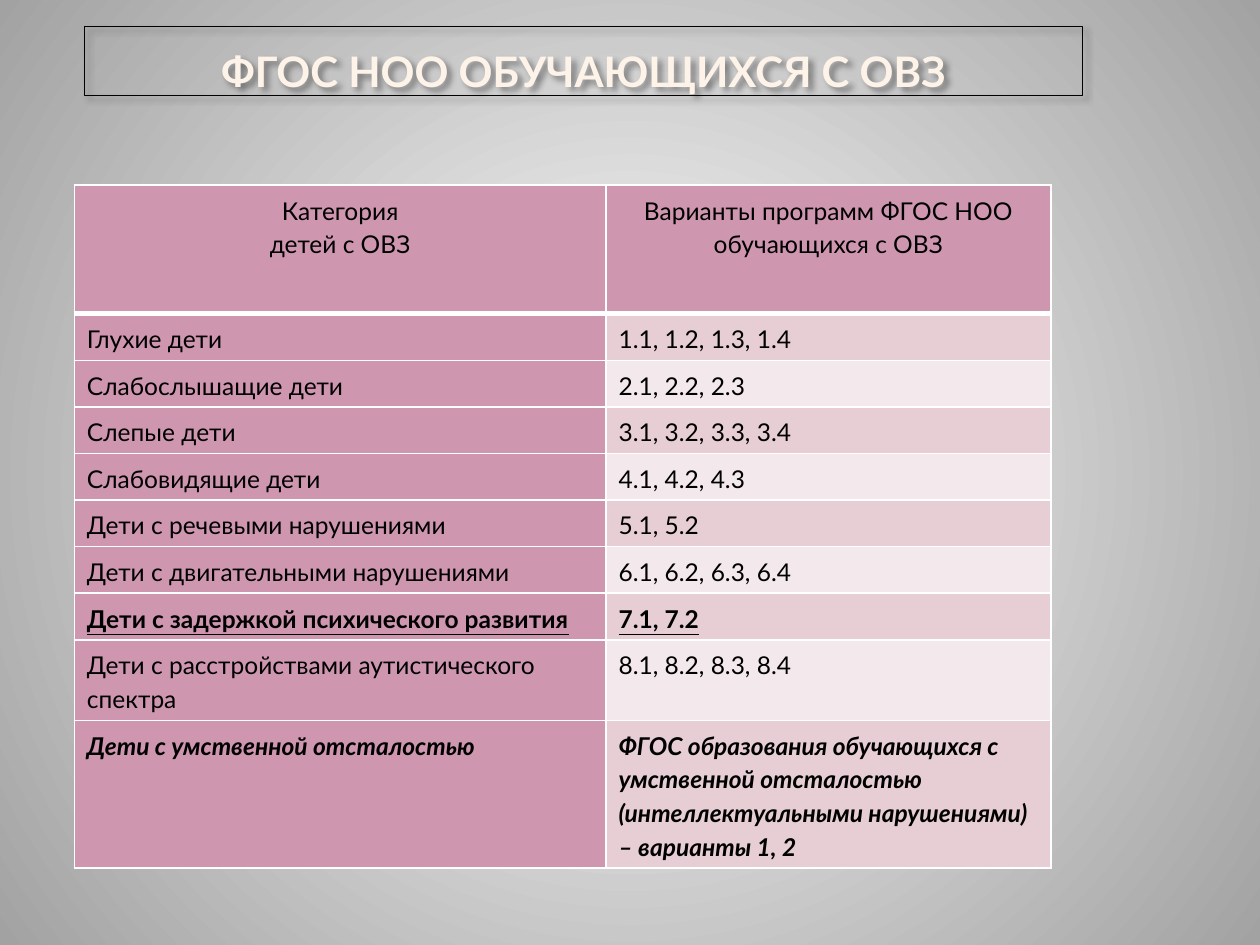
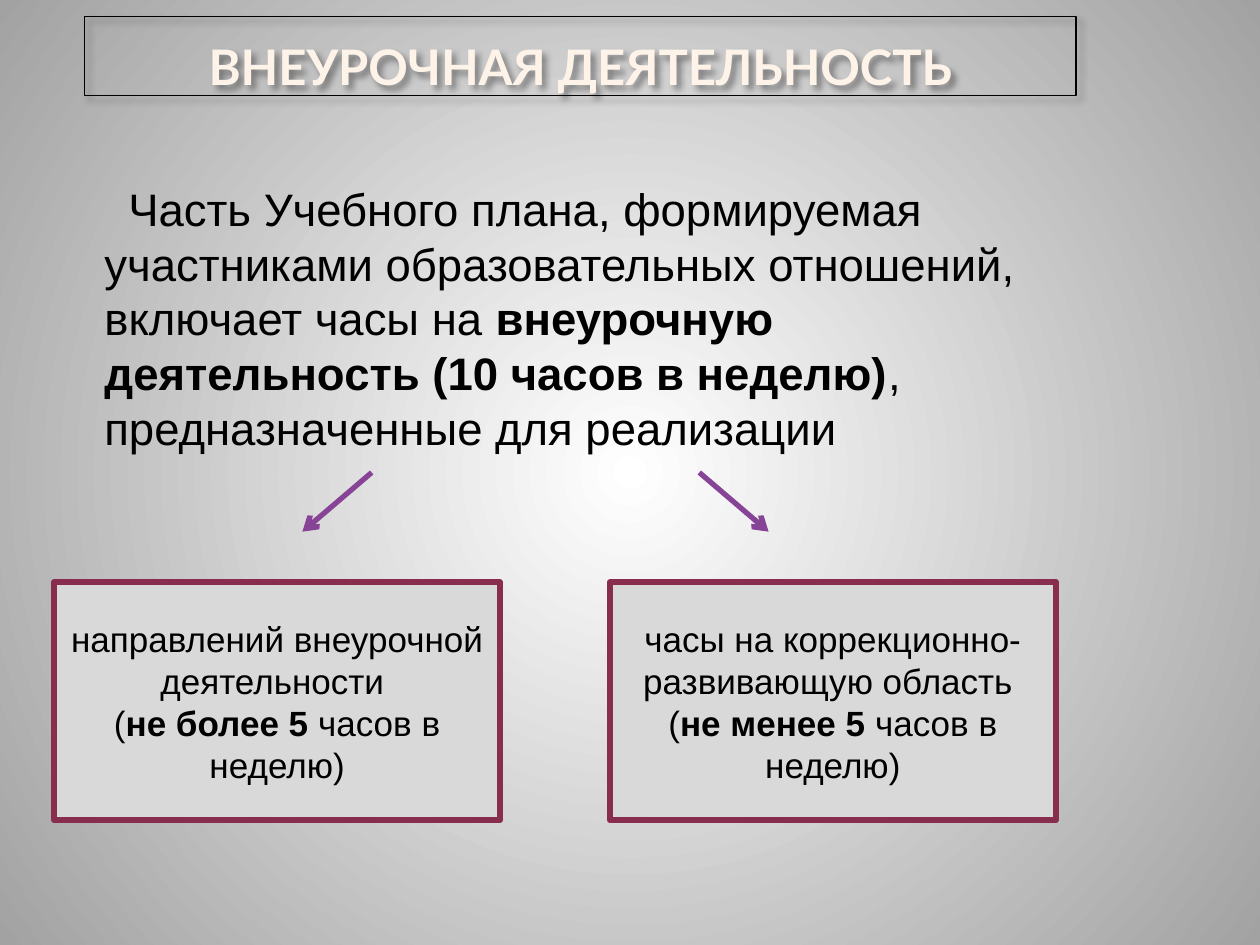
import dataclasses

import lxml.etree
import pptx
import pptx.dml.color
import pptx.enum.shapes
import pptx.enum.text
import pptx.oxml.ns
import pptx.util

Inches = pptx.util.Inches
Pt = pptx.util.Pt
Color = pptx.dml.color.RGBColor.from_string
Align = pptx.enum.text.PP_ALIGN
Anchor = pptx.enum.text.MSO_ANCHOR
qn = pptx.oxml.ns.qn


@dataclasses.dataclass(frozen=True)
class Theme:
    black: str = "000000"
    white: str = "FFFFFF"
    category: str = "CF96B0"
    bands: tuple = ("E6CED4", "F3E8EB")
    arrow: str = "874396"
    panel: str = "D9D9D9"
    panel_line: str = "882D4D"
    title_outline: str = "5E1A50"
    title_stops: tuple = ((0, "FEF7F1"), (10, "FEF3E8"), (49, "FBCF9C"),
                          (50, "F9B94C"), (100, "FEF3E8"))
    page_stops: tuple = ((0, "FFFFFF"), (100, "A2A2A2"))
    title_font: str = "Lato"
    body_font: str = "Arial"
    table_size: int = 14
    body_size: int = 26
    panel_size: int = 20


theme = Theme()


def add_xml(parent, tag, index=None, **attributes):
    """Insert a new child element, at the end unless an index is given."""
    child = lxml.etree.Element(qn(tag), {k: str(v) for k, v in attributes.items()})
    parent.insert(len(parent) if index is None else index, child)
    return child


def add_gradient(parent, index, stops):
    """Insert a gradient fill and return it, ready for its direction."""
    gradient = add_xml(parent, "a:gradFill", index, rotWithShape=1)
    stop_list = add_xml(gradient, "a:gsLst")
    for position, color in stops:
        stop = add_xml(stop_list, "a:gs", pos=position * 1000)
        add_xml(stop, "a:srgbClr", val=color)
    return gradient


deck = pptx.Presentation()
deck.slide_width, deck.slide_height = Inches(10), Inches(7.5)

# Shared background: a radial gradient on the master
master = deck.slide_master
master.background.fill.solid()
solid = master.element.find(".//" + qn("p:bgPr") + "/" + qn("a:solidFill"))
background = solid.getparent()
background.remove(solid)
radial = add_xml(add_gradient(background, 0, theme.page_stops), "a:path", path="circle")
add_xml(radial, "a:fillToRect", l=50000, t=50000, r=50000, b=50000)

# Pages and their framed titles
titles = [
    ("ФГОС НОО ОБУЧАЮЩИХСЯ С ОВЗ", 24, 0.21, 7.92, 0.55),
    ("ВНЕУРОЧНАЯ ДЕЯТЕЛЬНОСТЬ", 28, 0.13, 7.87, 0.63),
]
pages = []
for text, size, top, width, height in titles:
    page = deck.slides.add_slide(deck.slide_layouts[5])
    pages.append(page)
    title = page.shapes.title
    place = {"left": 0.67, "top": top, "width": width, "height": height}
    for name, value in place.items():
        setattr(title, name, Inches(value))
    title.line.color.rgb = Color(theme.black)
    title.line.width = Pt(0.75)
    title.shadow.inherit = False
    effects = title._element.spPr.find(qn("a:effectLst"))
    shadow = add_xml(effects, "a:outerShdw", blurRad=Pt(4), dist=Pt(3),
                     dir=45 * 60000, algn="tl", rotWithShape=0)
    shadow_color = add_xml(shadow, "a:srgbClr", val=theme.black)
    add_xml(shadow_color, "a:alpha", val=40000)

    frame = title.text_frame
    frame_format = {
        "auto_size": pptx.enum.text.MSO_AUTO_SIZE.NONE,
        "vertical_anchor": Anchor.BOTTOM, "word_wrap": True,
        "margin_left": Inches(0.05), "margin_right": Inches(0.05),
        "margin_top": 0, "margin_bottom": 0,
    }
    for name, value in frame_format.items():
        setattr(frame, name, value)
    para = frame.paragraphs[0]
    para.alignment = Align.CENTER
    span = para.add_run()
    span.text = text
    properties = span._r.get_or_add_rPr()
    outline = add_xml(properties, "a:ln", 0, w=500)
    add_xml(add_xml(outline, "a:solidFill"), "a:srgbClr", val=theme.title_outline)
    add_xml(add_gradient(properties, 1, theme.title_stops), "a:lin", ang=90 * 60000)
    for name, value in {"name": theme.title_font, "size": Pt(size), "bold": True}.items():
        setattr(span.font, name, value)

programs_page, activity_page = pages

# Table of categories and programme variants
underlined = {"bold": True, "underline": True}
slanted = {"bold": True, "italic": True}
rows = [
    ("Категория\nдетей с ОВЗ", "Варианты программ ФГОС НОО\nобучающихся с ОВЗ", 1.02, {}),
    ("Глухие дети", "1.1, 1.2, 1.3, 1.4", 0.37, {}),
    ("Слабослышащие дети", "2.1, 2.2, 2.3", 0.37, {}),
    ("Слепые дети", "3.1, 3.2, 3.3, 3.4", 0.37, {}),
    ("Слабовидящие дети", "4.1, 4.2, 4.3", 0.37, {}),
    ("Дети с речевыми нарушениями", "5.1, 5.2", 0.37, {}),
    ("Дети с двигательными нарушениями", "6.1, 6.2, 6.3, 6.4", 0.37, {}),
    ("Дети с задержкой психического развития", "7.1, 7.2", 0.37, underlined),
    ("Дети с расстройствами аутистического спектра", "8.1, 8.2, 8.3, 8.4", 0.64, {}),
    ("Дети с умственной отсталостью",
     "ФГОС образования обучающихся с умственной отсталостью "
     "(интеллектуальными нарушениями) – варианты 1, 2", 1.17, slanted),
]
table = programs_page.shapes.add_table(
    len(rows), 2, Inches(0.59), Inches(1.47), Inches(7.75),
    Inches(sum(row[2] for row in rows))).table
table.first_row = table.horz_banding = False
for column, width in zip(table.columns, (4.22, 3.53)):
    column.width = Inches(width)
for row_index, (category, variants, height, emphasis) in enumerate(rows):
    table.rows[row_index].height = Inches(height)
    is_header = row_index == 0
    for column_index, text in enumerate((category, variants)):
        cell = table.cell(row_index, column_index)
        cell_properties = cell._tc.get_or_add_tcPr()
        for side in "LRTB":
            weight = 3 if is_header and side == "B" else 1
            border = add_xml(cell_properties, "a:ln" + side, w=Pt(weight))
            add_xml(add_xml(border, "a:solidFill"), "a:srgbClr", val=theme.white)
        is_category = is_header or column_index == 0
        cell.fill.solid()
        cell.fill.fore_color.rgb = Color(
            theme.category if is_category else theme.bands[(row_index - 1) % 2])
        cell.text = text
        for para in cell.text_frame.paragraphs:
            para.line_spacing = 1.15
            para.alignment = Align.CENTER if is_header else Align.LEFT
            font = para.runs[0].font
            font.color.rgb = Color(theme.black)
            font_format = {"name": theme.title_font, "size": Pt(theme.table_size),
                           "bold": False, **emphasis}
            for name, value in font_format.items():
                setattr(font, name, value)

# Statement, arrows and the two panels
statement = activity_page.shapes.add_textbox(
    Inches(0.43), Inches(1.39), Inches(8.35), Inches(2.3))
paragraph_properties = statement.text_frame.paragraphs[0]._p.get_or_add_pPr()
paragraph_properties.set("marL", str(Inches(0.3)))
paragraph_properties.set("indent", str(Inches(0.19)))

for start, end in ((2.95, 2.4), (5.55, 6.1)):
    arrow = activity_page.shapes.add_connector(
        pptx.enum.shapes.MSO_CONNECTOR.STRAIGHT,
        Inches(start), Inches(3.75), Inches(end), Inches(4.22))
    arrow.line.color.rgb = Color(theme.arrow)
    arrow.line.width = Pt(3)
    add_xml(arrow.line._get_or_add_ln(), "a:tailEnd", type="arrow")
    add_xml(arrow._element.spPr, "a:effectLst")

panels = []
for left in (0.43, 4.84):
    panel = activity_page.shapes.add_shape(
        pptx.enum.shapes.MSO_SHAPE.RECTANGLE,
        Inches(left), Inches(4.62), Inches(3.54), Inches(1.89))
    panel.shadow.inherit = False
    panel.fill.solid()
    panel.fill.fore_color.rgb = Color(theme.panel)
    panel.line.color.rgb = Color(theme.panel_line)
    panel.line.width = Pt(3.15)
    panel.text_frame.vertical_anchor = Anchor.MIDDLE
    panels.append(panel)

# Each text is plain, bold, plain; "\n" is a line break
texts = [
    (statement, theme.body_size, Align.LEFT,
     ("Часть Учебного плана, формируемая участниками образовательных отношений, "
      "включает часы на ", "внеурочную деятельность (10 часов в неделю)",
      ", предназначенные для реализации")),
    (panels[0], theme.panel_size, Align.CENTER,
     ("направлений внеурочной деятельности \n(", "не более 5 ", "часов в неделю)")),
    (panels[1], theme.panel_size, Align.CENTER,
     ("часы на коррекционно-развивающую область \n(", "не менее 5 ", "часов в неделю)")),
]
for box, size, alignment, parts in texts:
    box.text_frame.word_wrap = True
    para = box.text_frame.paragraphs[0]
    para.alignment = alignment
    for part_index, part in enumerate(parts):
        for line_index, line in enumerate(part.split("\n")):
            if line_index:
                para.add_line_break()
            span = para.add_run()
            span.text = line
            span.font.color.rgb = Color(theme.black)
            font_format = {"name": theme.body_font, "size": Pt(size),
                           "bold": part_index == 1}
            for name, value in font_format.items():
                setattr(span.font, name, value)

deck.save("out.pptx")
